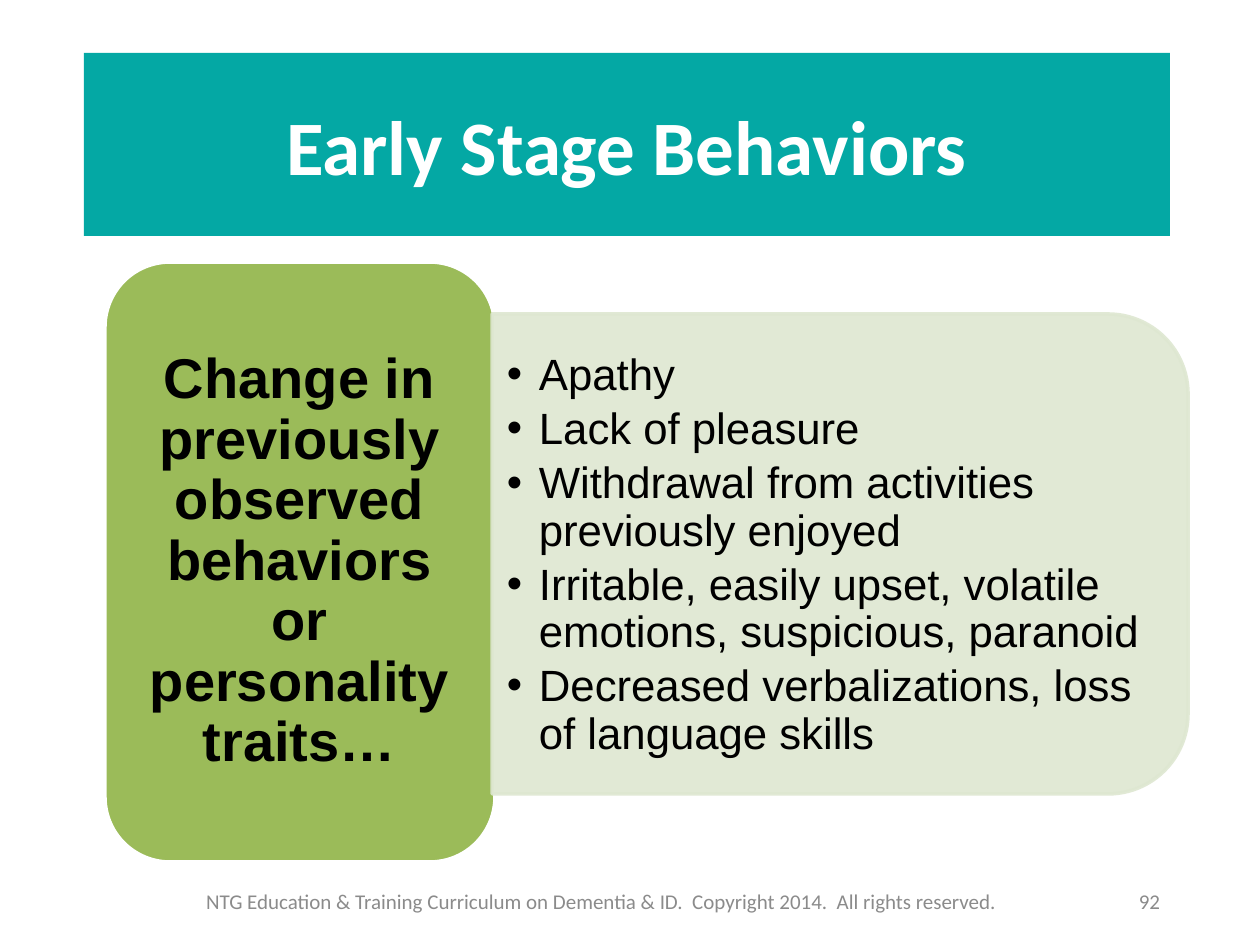
from lxml.etree import SubElement
from pptx import Presentation
from pptx.dml.color import RGBColor
from pptx.enum.shapes import MSO_SHAPE as SHAPE
from pptx.enum.text import MSO_ANCHOR as ANCHOR, PP_ALIGN as ALIGN
from pptx.oxml.ns import qn
from pptx.util import Emu, Pt

# Content
TITLE = "Early Stage Behaviors"
TOPIC = "Change in previously observed behaviors or personality traits…"
BEHAVIORS = [
    "Apathy",
    "Lack of pleasure",
    "Withdrawal from activities previously enjoyed",
    "Irritable, easily upset, volatile emotions, suspicious, paranoid",
    "Decreased verbalizations, loss of language skills",
]
FOOTER = ("NTG Education & Training Curriculum on Dementia & ID.  "
          "Copyright 2014.  All rights reserved.")
PAGE = "92"

# Theme: colours and text formats
COLOR = {"teal": "04A8A4", "green": "9BBB59", "pale": "DEE7D1", "white": "FFFFFF"}
FORMAT = {
    "title": dict(name="Calibri", size=44, bold=True, color="FFFFFF"),
    "topic": dict(name="Arial", size=32, bold=True, color="000000"),
    "bullet": dict(name="Arial", size=25, bold=False, color="000000"),
    "footer": dict(name="Calibri", size=12, bold=False, color="8B8B8B"),
}

# Places in px: left, top, width, height
WIDTH, HEIGHT = 1260, 945
TITLE_BOX = (84, 53, 1086, 183)
TOPIC_CARD = (105, 262, 390, 600)
TOPIC_TEXT = (123, 281, 353, 562)
LIST_CARD = (492, 314, 696, 480)
LIST_TEXT = (494, 339, 672, 433)
FOOTER_BOX = (69, 876, 1065, 50)
PAGE_BOX = (890, 876, 283, 50)
INDENT = 32


def px(n):
    return Emu(round(n * 914400 / 126))


def add_card(s, kind, box, fill, line=None, opacity=100):
    sp = s.shapes.add_shape(kind, *map(px, box))
    sp.shadow.inherit = False
    sp.fill.solid()
    sp.fill.fore_color.rgb = RGBColor.from_string(fill)
    if line:
        sp.line.color.rgb = RGBColor.from_string(line)
        sp.line.width = Pt(2)
    else:
        sp.line.fill.background()
    if opacity < 100:
        for clr in sp._element.spPr.iter(qn("a:srgbClr")):
            SubElement(clr, qn("a:alpha"), val=str(opacity * 1000))
    return sp


def write(sp, texts, style, align, margins=(13, 6), spacing=None, after=0, bullet=False):
    tf = sp.text_frame
    tf.word_wrap = True
    tf.vertical_anchor = ANCHOR.MIDDLE
    tf.margin_left = tf.margin_right = px(margins[0])
    tf.margin_top = tf.margin_bottom = px(margins[1])
    for i, text in enumerate(texts):
        p = tf.add_paragraph() if i else tf.paragraphs[0]
        p.alignment = align
        p.line_spacing = spacing
        p.space_after = Pt(after)
        if bullet:
            pPr = p._p.get_or_add_pPr()
            pPr.set("marL", str(px(INDENT)))
            pPr.set("indent", str(-px(INDENT)))
            SubElement(pPr, qn("a:buFont"), typeface="Arial")
            SubElement(pPr, qn("a:buChar"), char="•")
        r = p.add_run()
        r.text = text
        values = dict(FORMAT[style])
        r.font.color.rgb = RGBColor.from_string(values.pop("color"))
        values["size"] = Pt(values["size"])
        for key, value in values.items():
            setattr(r.font, key, value)


def add_text(s, box, *args, **kwargs):
    write(s.shapes.add_textbox(*map(px, box)), *args, **kwargs)


def main():
    prs = Presentation()
    prs.slide_width, prs.slide_height = px(WIDTH), px(HEIGHT)
    s = prs.slides.add_slide(prs.slide_layouts[6])

    # Title band
    band = add_card(s, SHAPE.RECTANGLE, TITLE_BOX, COLOR["teal"])
    write(band, [TITLE], "title", ALIGN.CENTER)

    # Footer and page number
    add_text(s, PAGE_BOX, [PAGE], "footer", ALIGN.RIGHT)
    add_text(s, FOOTER_BOX, [FOOTER], "footer", ALIGN.CENTER)

    # Topic card
    add_card(s, SHAPE.ROUNDED_RECTANGLE, TOPIC_CARD, COLOR["green"], COLOR["white"])
    add_text(s, TOPIC_TEXT, [TOPIC], "topic", ALIGN.CENTER, margins=(16, 9), spacing=0.9)

    # List card: a top-rounded shape turned a quarter about its centre
    x, y, w, h = LIST_CARD
    upright = (x + (w - h) / 2, y + (h - w) / 2, h, w)
    card = add_card(s, SHAPE.ROUND_2_SAME_RECTANGLE, upright,
                    COLOR["pale"], COLOR["pale"], opacity=90)
    card.rotation = 90
    add_text(s, LIST_TEXT, BEHAVIORS, "bullet", ALIGN.LEFT,
             spacing=0.9, after=4, bullet=True)

    prs.save("out.pptx")


if __name__ == "__main__":
    main()
